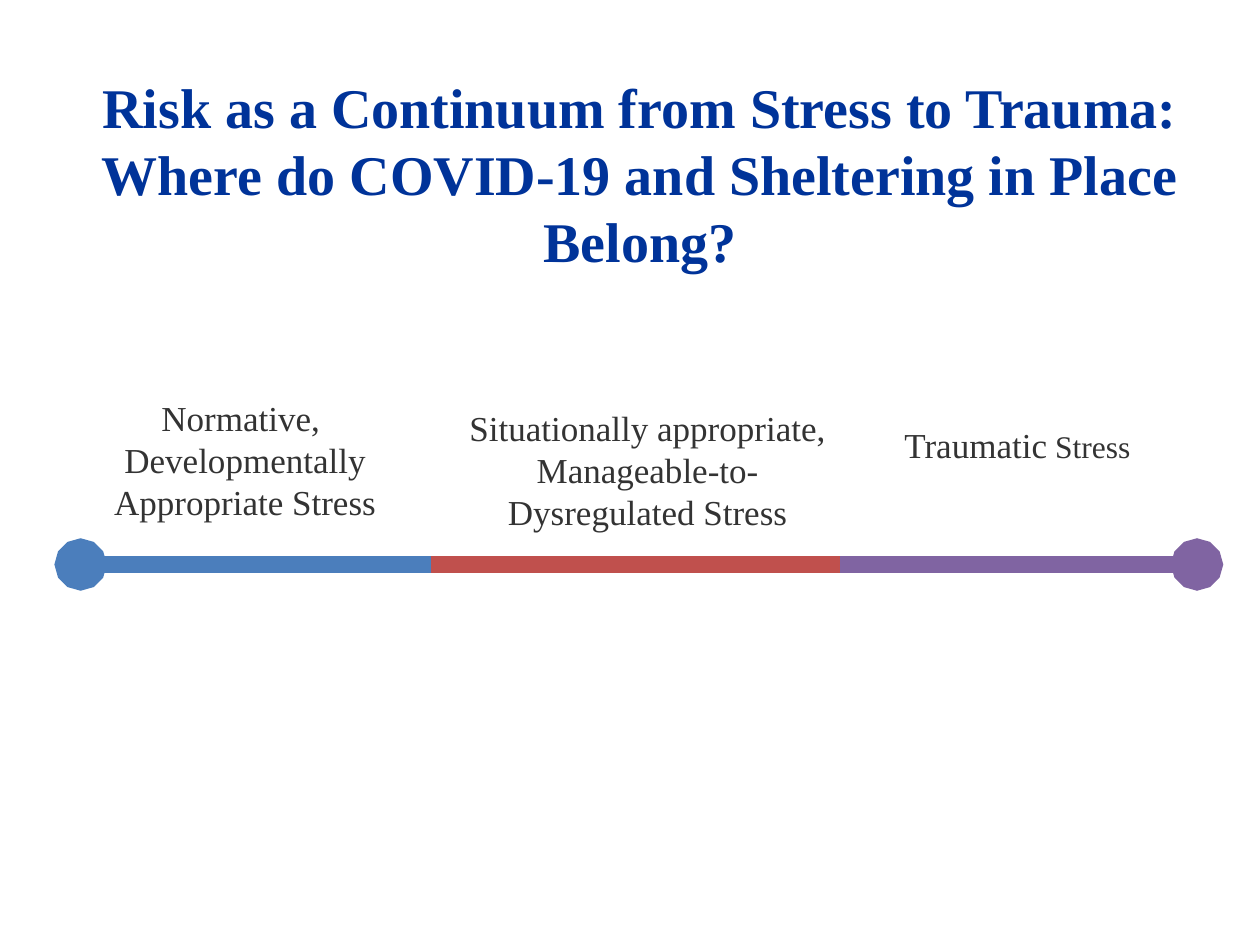
from lxml import etree
from pptx import Presentation, util as u
from pptx.dml.color import RGBColor
from pptx.enum import shapes, text
from pptx.oxml.ns import qn

THEME = dict(font="Times New Roman", title="003399", body="333333",
             title_size=32, body_size=20, small_size=18, line=10)

TITLE = "Risk as a Continuum from Stress to Trauma:\vWhere do COVID-19 and Sheltering in Place Belong?"
TITLE_BOX = (0.5, 0.58, 9.16, 1.59)

# Each label: box (left, top, width, height), alignment, paragraphs of (text, size) runs
BODY, SMALL = THEME["body_size"], THEME["small_size"]
LABELS = [
    ((0.5, 3.1, 2.89, 1.41), "CENTER",
     [[("Normative, ", BODY)], [("Developmentally Appropriate Stress", BODY)]]),
    ((3.53, 3.18, 3.22, 1.11), "CENTER",
     [[("Situationally appropriate, Manageable-to-Dysregulated Stress", BODY)]]),
    ((7.08, 3.31, 2.17, 0.44), "LEFT",
     [[("Traumatic", BODY), (" Stress", SMALL)]]),
]

# Continuum: stops along x, then colour and round end of each stretch between them
AXIS_Y = 4.48
STOPS = [0.64, 3.42, 6.67, 9.5]
STRETCHES = [("4B7EBC", "headEnd"), ("C0504D", None), ("8064A2", "tailEnd")]


def add_text(s, box, paragraphs, color, align="CENTER", anchor="TOP", bold=False):
    """Add a wrapped text box; paragraphs are lists of (text, size) runs."""
    tf = s.shapes.add_textbox(*map(u.Inches, box)).text_frame
    tf.word_wrap = True
    tf.vertical_anchor = text.MSO_ANCHOR[anchor]
    for i, runs in enumerate(paragraphs):
        p = tf.paragraphs[0] if i == 0 else tf.add_paragraph()
        p.alignment = text.PP_ALIGN[align]
        for j, (words, size) in enumerate(runs):
            for k, line in enumerate(words.split("\v")):
                if k:
                    p.add_line_break()
                r = p.add_run()
                r.text = line
                r.font.name, r.font.size, r.font.bold = THEME["font"], u.Pt(size), bold
                r.font.color.rgb = RGBColor.from_string(color)


def add_stretch(s, x1, x2, color, round_end):
    y = u.Inches(AXIS_Y)
    sp = s.shapes.add_connector(shapes.MSO_CONNECTOR.STRAIGHT,
                                u.Inches(x1), y, u.Inches(x2), y)
    sp.line.width = u.Pt(THEME["line"])
    sp.line.color.rgb = RGBColor.from_string(color)
    if round_end:
        etree.SubElement(sp.line._get_or_add_ln(), qn("a:" + round_end), type="oval")
    etree.SubElement(sp._element.spPr, qn("a:effectLst"))


def main():
    prs = Presentation()
    prs.slide_width, prs.slide_height = u.Inches(10), u.Inches(7.5)
    s = prs.slides.add_slide(prs.slide_layouts[6])
    add_text(s, TITLE_BOX, [[(TITLE, THEME["title_size"])]], THEME["title"],
             anchor="MIDDLE", bold=True)
    for box, align, paragraphs in LABELS:
        add_text(s, box, paragraphs, THEME["body"], align=align)
    for x1, x2, (color, round_end) in zip(STOPS, STOPS[1:], STRETCHES):
        add_stretch(s, x1, x2, color, round_end)
    prs.save("out.pptx")


if __name__ == "__main__":
    main()
